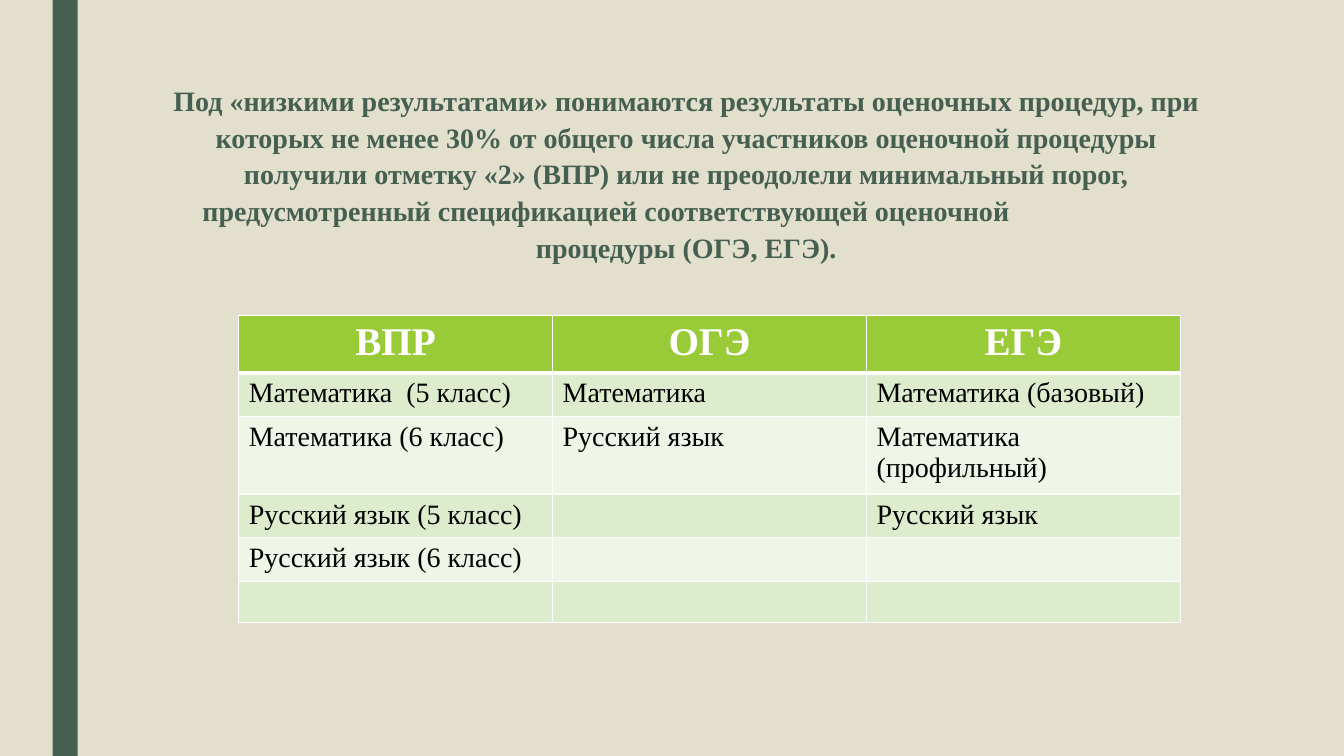
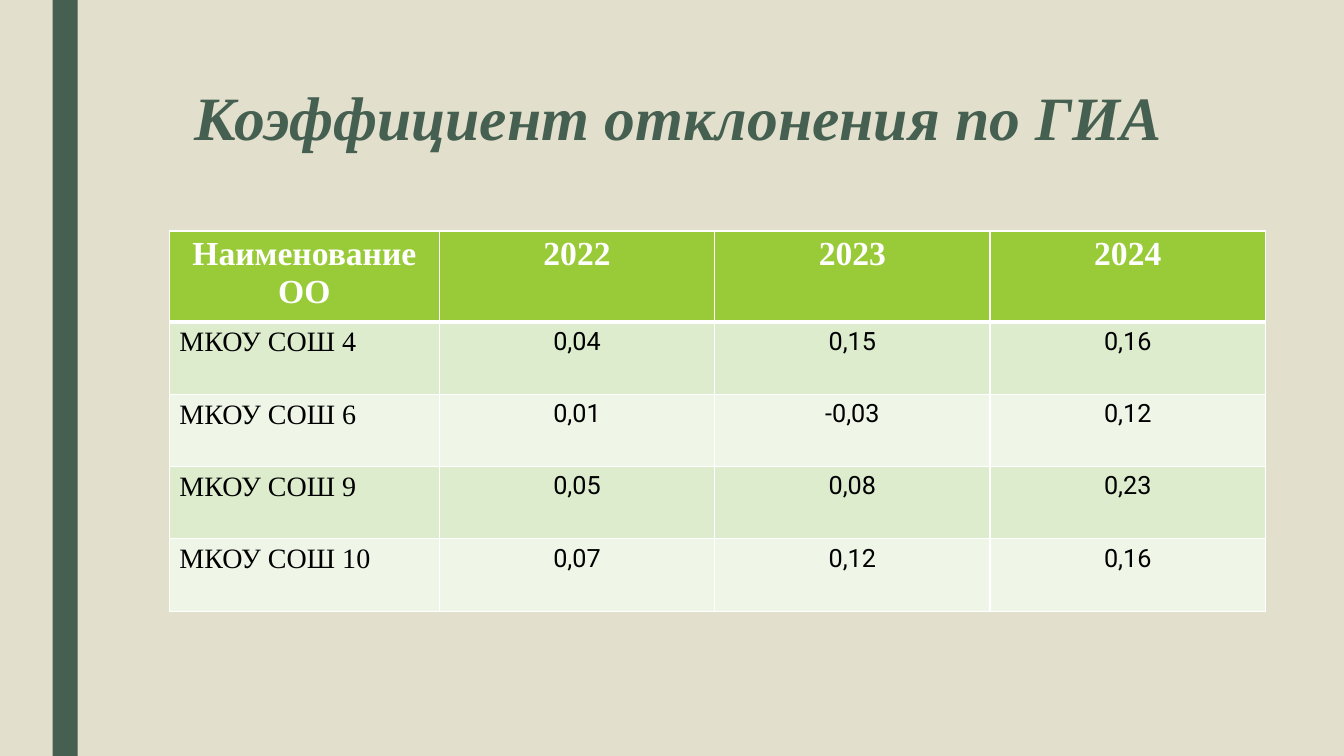
from lxml import etree
from pptx import Presentation
from pptx.dml.color import RGBColor
from pptx.enum import shapes, text
from pptx.oxml import ns
from pptx.util import Pt

SAND = RGBColor(0xE2, 0xDF, 0xCC)
PINE = RGBColor(0x45, 0x5F, 0x51)
LIME = RGBColor(0x99, 0xCB, 0x38)
BANDS = (RGBColor(0xDE, 0xEC, 0xCE), RGBColor(0xEF, 0xF6, 0xE8))
WHITE = RGBColor(0xFF, 0xFF, 0xFF)
BLACK = RGBColor(0, 0, 0)

SLIDE_W, SLIDE_H = 960, 540
SERIF = "Times New Roman"
CENTER, LEFT = text.PP_ALIGN.CENTER, text.PP_ALIGN.LEFT

DEFINITION_STYLE = {"name": SERIF, "size": Pt(20), "bold": True}
TITLE_STYLE = {"name": SERIF, "size": Pt(44), "bold": True, "italic": True}
LABEL_STYLE = {"name": SERIF, "size": Pt(20), "bold": False}
VALUE_STYLE = {"name": "Roboto", "size": Pt(18), "bold": False}

DEFINITION = (
    ("Под «низкими результатами» понимаются результаты оценочных процедур, "
     "при которых не менее 30% от общего числа участников оценочной процедуры "
     "получили отметку «2» (ВПР) или не преодолели минимальный порог,", CENTER, 0),
    ("предусмотренный спецификацией соответствующей оценочной", LEFT, 21),
    ("процедуры (ОГЭ, ЕГЭ).", CENTER, 0),
)
SUBJECTS = (
    ("ВПР", "ОГЭ", "ЕГЭ"),
    ("Математика  (5 класс)", "Математика", "Математика (базовый)"),
    ("Математика (6 класс)", "Русский язык", "Математика (профильный)"),
    ("Русский язык (5 класс)", "", "Русский язык"),
    ("Русский язык (6 класс)", "", ""),
    ("", "", ""),
)
DEVIATIONS = (
    ("Наименование ОО", "2022", "2023", "2024"),
    ("МКОУ СОШ 4", "0,04", "0,15", "0,16"),
    ("МКОУ СОШ 6", "0,01", "-0,03", "0,12"),
    ("МКОУ СОШ 9", "0,05", "0,08", "0,23"),
    ("МКОУ СОШ 10", "0,07", "0,12", "0,16"),
)


def write(paragraph, words, style, color, align):
    """Put one formatted run into a paragraph."""
    paragraph.alignment = align
    run = paragraph.add_run()
    run.text = words
    for attribute, value in style.items():
        setattr(run.font, attribute, value)
    run.font.color.rgb = color


def add_base(deck):
    """Add a blank slide with the vertical side band."""
    slide = deck.slides.add_slide(deck.slide_layouts[6])
    band = slide.shapes.add_shape(
        shapes.MSO_SHAPE.RECTANGLE, Pt(37.5), 0, Pt(18), Pt(SLIDE_H))
    band.shadow.inherit = False
    band.fill.solid()
    band.fill.fore_color.rgb = PINE
    band.line.fill.background()
    return slide


def add_heading(slide, box, paragraphs, style, spacing=1.0):
    """Write (words, alignment, indent) paragraphs into a box."""
    frame = slide.shapes.add_textbox(*map(Pt, box)).text_frame
    frame.word_wrap = True
    for index, (words, align, indent) in enumerate(paragraphs):
        paragraph = frame.add_paragraph() if index else frame.paragraphs[0]
        paragraph.line_spacing = spacing
        if indent:
            paragraph._p.get_or_add_pPr().set("marL", str(Pt(indent)))
        write(paragraph, words, style, PINE, align)


def set_borders(cell, row):
    """Draw white cell borders, thicker under the header row."""
    widths = {"lnL": 1, "lnR": 1, "lnT": 3 if row == 1 else 1, "lnB": 1 if row else 3}
    properties = cell._tc.get_or_add_tcPr()
    for index, (side, width) in enumerate(widths.items()):
        line = etree.Element(ns.qn(f"a:{side}"), w=str(Pt(width)))
        fill = etree.SubElement(line, ns.qn("a:solidFill"))
        etree.SubElement(fill, ns.qn("a:srgbClr"), val=str(WHITE))
        properties.insert(index, line)


def add_grid(slide, origin, widths, heights, rows, header_size, value_style, value_align):
    """Add a banded table whose first column holds labels."""
    frame = slide.shapes.add_table(
        len(rows), len(widths), *map(Pt, (*origin, sum(widths), sum(heights))))
    table = frame.table
    for column, width in zip(table.columns, widths):
        column.width = Pt(width)
    header_style = {"name": SERIF, "size": Pt(header_size), "bold": True}
    for r, (entries, height) in enumerate(zip(rows, heights)):
        table.rows[r].height = Pt(height)
        for c, words in enumerate(entries):
            cell = table.cell(r, c)
            cell.fill.solid()
            cell.fill.fore_color.rgb = BANDS[(r - 1) % 2] if r else LIME
            set_borders(cell, r)
            if not words:
                continue
            if r == 0:
                look = header_style, WHITE, CENTER
            elif c == 0:
                look = LABEL_STYLE, BLACK, LEFT
            else:
                look = value_style, BLACK, value_align
            write(cell.text_frame.paragraphs[0], words, *look)


def add_definition_slide(deck):
    """Define low results and list the subjects by procedure."""
    slide = add_base(deck)
    add_heading(slide, (116.5, 54, 747.5, 130), DEFINITION, DEFINITION_STYLE, 1.09)
    add_grid(slide, (170.5, 225.5), [224.2] * 3, [38.2, 29.2, 51.5] + [29.2] * 3,
             SUBJECTS, 28, LABEL_STYLE, LEFT)


def add_deviation_slide(deck):
    """Show the deviation coefficient of each school by year."""
    slide = add_base(deck)
    title = (("Коэффициент отклонения по ГИА", CENTER, 0),)
    add_heading(slide, (107, 53, 756, 60), title, TITLE_STYLE)
    add_grid(slide, (121, 165), [192.8] + [196.7] * 3, [60.3] + [51.7] * 4,
             DEVIATIONS, 24, VALUE_STYLE, CENTER)


def main():
    """Build and save the deck."""
    deck = Presentation()
    deck.slide_width, deck.slide_height = Pt(SLIDE_W), Pt(SLIDE_H)
    backdrop = deck.slide_master.background.fill
    backdrop.solid()
    backdrop.fore_color.rgb = SAND
    add_definition_slide(deck)
    add_deviation_slide(deck)
    deck.save("out.pptx")


if __name__ == "__main__":
    main()
